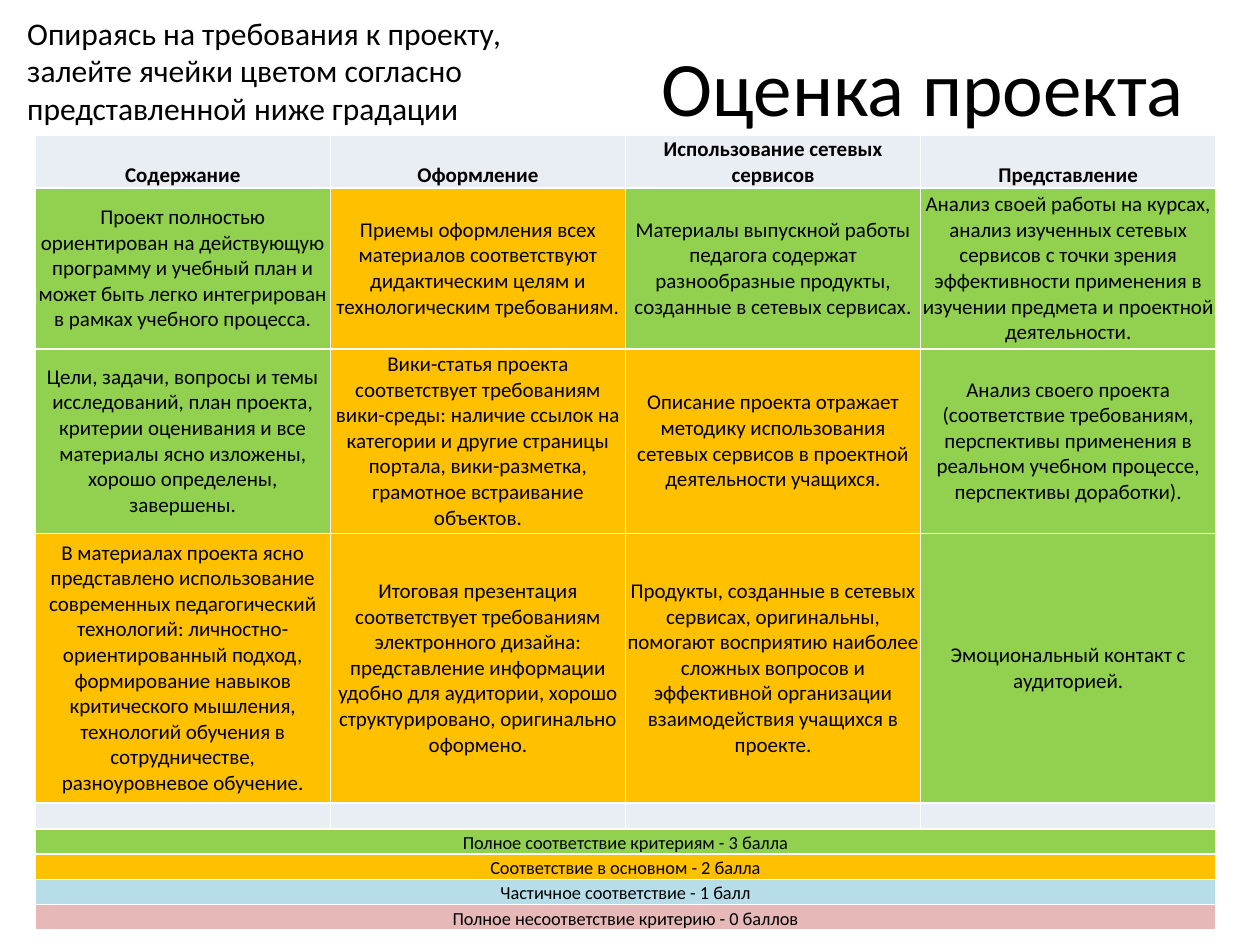
from dataclasses import dataclass
from typing import Any

from lxml import etree
from pptx import Presentation
from pptx.dml.color import RGBColor
from pptx.enum.text import MSO_ANCHOR, PP_ALIGN
from pptx.oxml.ns import qn
from pptx.util import Cm, Pt

LEFT, CENTER, RIGHT = PP_ALIGN.LEFT, PP_ALIGN.CENTER, PP_ALIGN.RIGHT
TOP, MIDDLE, BOTTOM = MSO_ANCHOR.TOP, MSO_ANCHOR.MIDDLE, MSO_ANCHOR.BOTTOM

BLACK = RGBColor(0x00, 0x00, 0x00)
WHITE = RGBColor(0xFF, 0xFF, 0xFF)
PALE = RGBColor(0xE9, 0xED, 0xF4)
GREEN = RGBColor(0x92, 0xD0, 0x50)
AMBER = RGBColor(0xFF, 0xC0, 0x00)
BLUE = RGBColor(0xB7, 0xDE, 0xE8)
PINK = RGBColor(0xE6, 0xB9, 0xB8)

FONT = "Calibri"
COLUMN_WIDTH = Cm(5.95)
HEADER_HEIGHT = Cm(1.07)
CRITERIA_HEIGHTS = (Cm(3.25), Cm(3.71), Cm(5.44))
THIN_HEIGHT = Cm(0.51)
CELL_MARGINS = dict.fromkeys(
    ("margin_left", "margin_top", "margin_right", "margin_bottom"), 0
)


@dataclass(frozen=True)
class Entry:
    text: str
    fill: RGBColor
    size: float = 12
    bold: bool = False
    anchor: Any = MIDDLE


@dataclass(frozen=True)
class Caption:
    text: str
    left: float
    top: float
    width: float
    height: float
    size: float
    align: Any
    anchor: Any


CAPTIONS = (
    Caption("Оценка проекта", 1.27, 0.13, 22.86, 3.18, 44, RIGHT, MIDDLE),
    Caption(
        "Опираясь на требования к проекту, залейте ячейки цветом согласно "
        "представленной ниже градации",
        0.3, 0.15, 12.19, 2.57, 18, LEFT, TOP,
    ),
)

HEADINGS = ("Содержание", "Оформление", "Использование сетевых сервисов", "Представление")

CRITERIA = (
    (
        Entry("Проект полностью ориентирован на действующую программу и учебный план "
              "и может быть легко интегрирован в рамках учебного процесса.", GREEN),
        Entry("Приемы оформления всех материалов соответствуют дидактическим целям "
              "и технологическим требованиям.", AMBER),
        Entry("Материалы выпускной работы педагога содержат разнообразные продукты, "
              "созданные в сетевых сервисах.", GREEN),
        Entry("Анализ своей работы на курсах, анализ изученных сетевых сервисов "
              "с точки зрения эффективности применения в изучении предмета "
              "и проектной деятельности.", GREEN),
    ),
    (
        Entry("Цели, задачи, вопросы и темы исследований, план проекта, критерии "
              "оценивания и все материалы ясно изложены, хорошо определены, "
              "завершены.", GREEN),
        Entry("Вики-статья проекта соответствует требованиям вики-среды: наличие "
              "ссылок на категории и другие страницы портала, вики-разметка, "
              "грамотное встраивание объектов.", AMBER),
        Entry("Описание проекта отражает методику использования сетевых сервисов "
              "в проектной деятельности учащихся.", AMBER),
        Entry("Анализ своего проекта (соответствие требованиям, перспективы "
              "применения в реальном учебном процессе, перспективы доработки).", GREEN),
    ),
    (
        Entry("В материалах проекта ясно представлено использование современных "
              "педагогический технологий: личностно-ориентированный подход, "
              "формирование навыков критического мышления, технологий обучения "
              "в сотрудничестве, разноуровневое обучение.", AMBER),
        Entry("Итоговая презентация соответствует требованиям электронного дизайна: "
              "представление информации удобно для аудитории, хорошо "
              "структурировано, оригинально оформено.", AMBER),
        Entry("Продукты, созданные в сетевых сервисах, оригинальны, помогают "
              "восприятию наиболее сложных вопросов и эффективной организации "
              "взаимодействия учащихся в проекте.", AMBER),
        Entry("Эмоциональный контакт с аудиторией.", GREEN),
    ),
)

GRADES = (
    ("Полное соответствие критериям - 3 балла", GREEN),
    ("Соответствие в основном - 2 балла", AMBER),
    ("Частичное соответствие - 1 балл", BLUE),
    ("Полное несоответствие критерию - 0 баллов", PINK),
)


def apply_format(target: Any, values: dict[str, Any]) -> None:
    """Set every named attribute on the target."""
    for name, value in values.items():
        setattr(target, name, value)


def write_text(paragraph: Any, text: str, size: float, align: Any, bold: bool = False) -> None:
    """Write one formatted run, or size the paragraph when it is empty."""
    paragraph.alignment = align
    if not text:
        paragraph._p.get_or_add_endParaRPr().set("sz", str(round(size * 100)))
        return
    run = paragraph.add_run()
    run.text = text
    apply_format(run.font, {"name": FONT, "size": Pt(size), "bold": bold})
    run.font.color.rgb = BLACK


def add_borders(cell: Any) -> None:
    """Give all four sides of a cell a white line."""
    properties = cell._tc.get_or_add_tcPr()
    for side in ("a:lnL", "a:lnR", "a:lnT", "a:lnB"):
        line = etree.SubElement(properties, qn(side), w=str(Pt(1)))
        solid = etree.SubElement(line, qn("a:solidFill"))
        etree.SubElement(solid, qn("a:srgbClr"), val=str(WHITE))


def fill_cell(cell: Any, entry: Entry) -> None:
    """Draw an entry in a table cell."""
    apply_format(cell, {**CELL_MARGINS, "vertical_anchor": entry.anchor})
    add_borders(cell)
    cell.fill.solid()
    cell.fill.fore_color.rgb = entry.fill
    write_text(cell.text_frame.paragraphs[0], entry.text, entry.size, CENTER, entry.bold)


def add_caption(slide: Any, caption: Caption) -> None:
    """Add a wrapped text box."""
    box = slide.shapes.add_textbox(
        Cm(caption.left), Cm(caption.top), Cm(caption.width), Cm(caption.height)
    )
    apply_format(box.text_frame, {"word_wrap": True, "vertical_anchor": caption.anchor})
    write_text(box.text_frame.paragraphs[0], caption.text, caption.size, caption.align)


def add_rubric(slide: Any) -> None:
    """Add the table of criteria with the grading scale below."""
    columns = len(HEADINGS)
    entries = [
        [Entry(heading, PALE, bold=True, anchor=BOTTOM) for heading in HEADINGS],
        *CRITERIA,
        [Entry("", PALE)] * columns,
        *([Entry(text, color, 10.5, anchor=BOTTOM)] for text, color in GRADES),
    ]
    heights = [HEADER_HEIGHT, *CRITERIA_HEIGHTS, *[THIN_HEIGHT] * (1 + len(GRADES))]
    rubric = slide.shapes.add_table(
        len(entries), columns, Cm(0.71), Cm(2.72), COLUMN_WIDTH * columns, sum(heights)
    ).table
    apply_format(rubric, {"first_row": False, "horz_banding": False})
    for column in rubric.columns:
        column.width = COLUMN_WIDTH
    for index, (row_entries, height) in enumerate(zip(entries, heights)):
        rubric.rows[index].height = height
        if len(row_entries) == 1:
            rubric.cell(index, 0).merge(rubric.cell(index, columns - 1))
        for position, entry in enumerate(row_entries):
            fill_cell(rubric.cell(index, position), entry)


def main() -> None:
    """Build and save the project assessment slide."""
    presentation = Presentation()
    apply_format(presentation, {"slide_width": Cm(25.4), "slide_height": Cm(19.05)})
    slide = presentation.slides.add_slide(presentation.slide_layouts[6])
    add_rubric(slide)
    for caption in CAPTIONS:
        add_caption(slide, caption)
    presentation.save("out.pptx")


if __name__ == "__main__":
    main()
